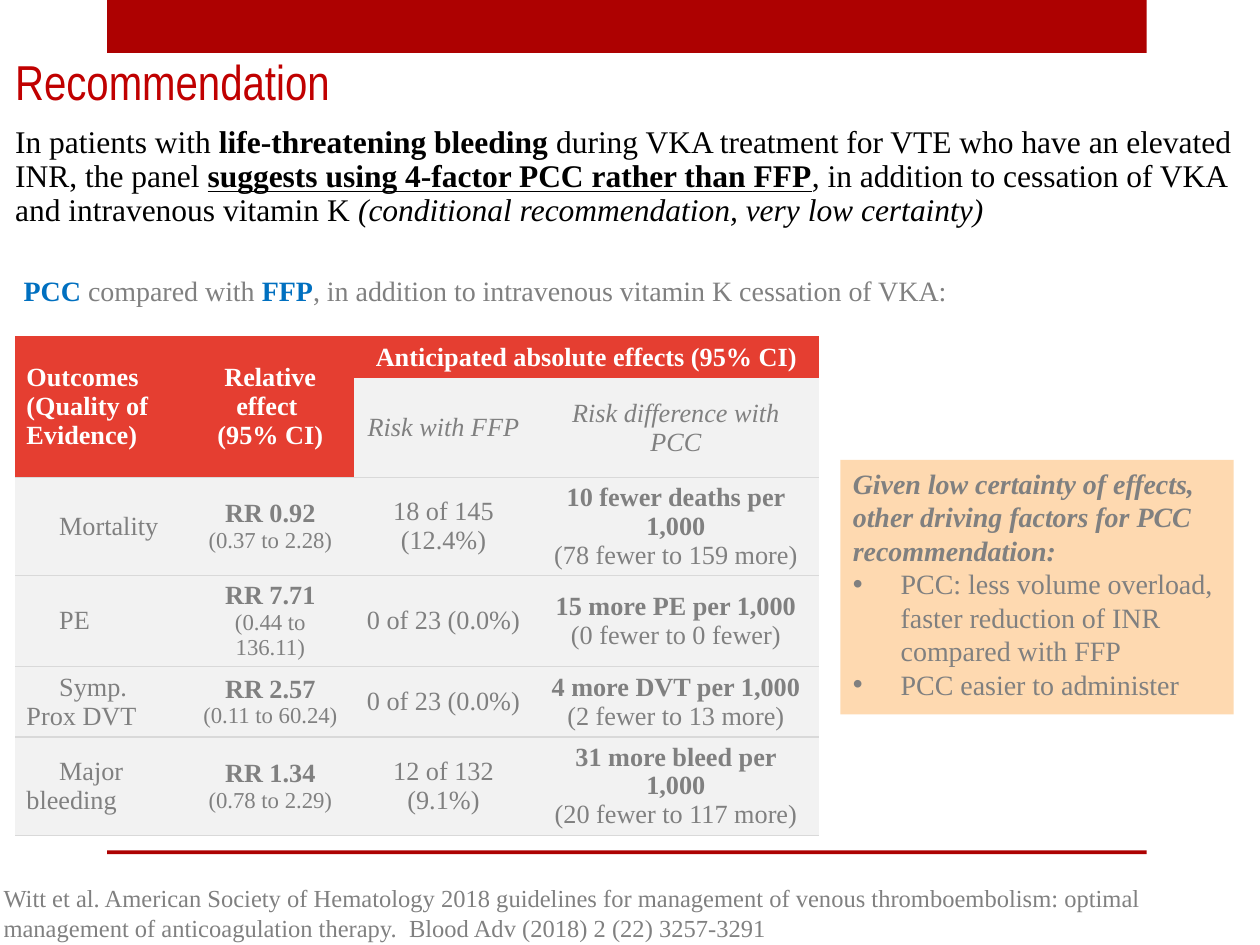
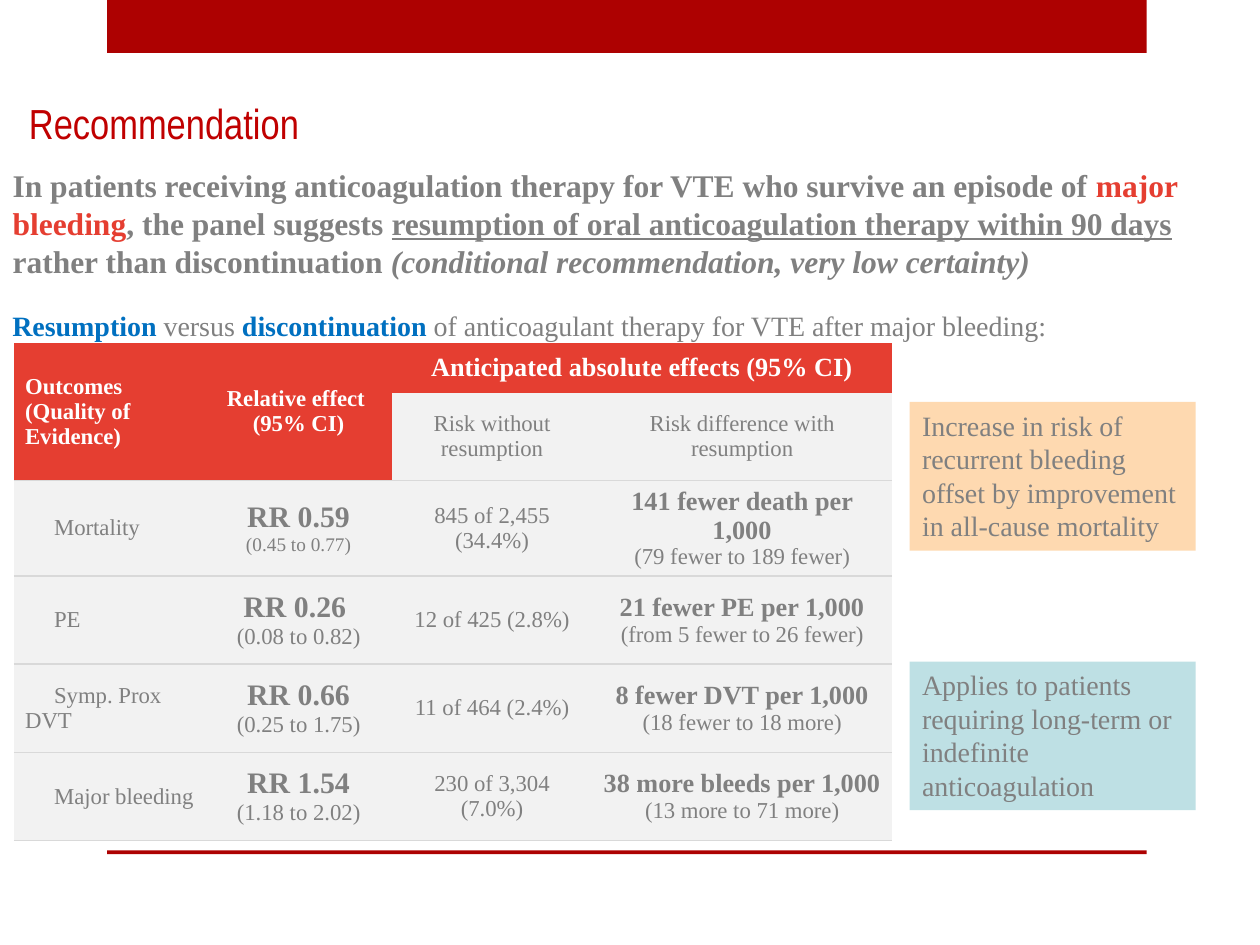
"""Build two slides of anticoagulation recommendations with evidence tables."""
from lxml import etree
from pptx import Presentation
from pptx.dml.color import RGBColor
from pptx.enum.shapes import MSO_SHAPE
from pptx.enum.text import MSO_ANCHOR, MSO_AUTO_SIZE, PP_ALIGN
from pptx.oxml.ns import qn
from pptx.util import Inches, Pt

RECTANGLE = MSO_SHAPE.RECTANGLE
TOP, MIDDLE = MSO_ANCHOR.TOP, MSO_ANCHOR.MIDDLE
LEFT, CENTER = PP_ALIGN.LEFT, PP_ALIGN.CENTER
NO_AUTOFIT = MSO_AUTO_SIZE.NONE

BAND, TITLE, HEADER = "AD0101", "C00000", "E53E31"
GREY, BLUE, BLACK, WHITE = "808080", "0070C0", "000000", "FFFFFF"
CELL, RULE, PEACH, AQUA = "F2F2F2", "D9D9D9", "FED9B0", "BEE0E4"
TITLE_FONT, TEXT_FONT = "Arial Narrow", "Times New Roman"
rgb = RGBColor.from_string

deck = Presentation()
deck.slide_width, deck.slide_height = Inches(10), Inches(7.5)


def area(left, top, width, height):
    """Turn percentages of the slide into left, top, width and height."""
    across, down = deck.slide_width / 100, deck.slide_height / 100
    return int(left * across), int(top * down), int(width * across), int(height * down)


def write(frame, text, new=False, align=LEFT, size=16, color=GREY, font=TEXT_FONT,
          bold=False, italic=False, underline=False, spacing=None):
    """Add a formatted span to the last paragraph, or to a new one."""
    para = frame.add_paragraph() if new else frame.paragraphs[-1]
    para.alignment, para.space_before = align, Pt(0)
    if spacing:
        para.line_spacing = spacing
    span = para.add_run()
    span.text = text
    span.font.name, span.font.size = font, Pt(size)
    span.font.color.rgb = rgb(color)
    span.font.bold, span.font.italic, span.font.underline = bold, italic, underline
    return para


KEY = {"color": BLUE, "bold": True}
STRONG = {"bold": True}
CERTAINTY = "(conditional recommendation, very low certainty)"

recommendations = [
    {
        "title": {"place": (1.2, 6.13, 97, 6.5), "size": 28, "spacing": 0.9},
        "body": {"place": (1.2, 13.4, 98.8, 14.6), "color": BLACK, "spacing": 0.9},
        "statement": [
            ("In patients with ", {}),
            ("life-threatening bleeding ", STRONG),
            ("during VKA treatment for VTE who have an elevated INR, the panel ", {}),
            ("suggests using 4-factor PCC rather than FFP", {"bold": True, "underline": True}),
            (", in addition to cessation of VKA and intravenous vitamin K ", {}),
            (CERTAINTY, {"italic": True}),
        ],
        "comparison_place": (0.9, 28.27, 98, 4.93),
        "comparison": [
            ("PCC ", KEY), ("compared with ", {}), ("FFP", KEY),
            (", in addition to intravenous vitamin K cessation of VKA:", {}),
        ],
        "table_corner": (1.2, 35.6),
        "columns": [13.6, 13.3, 14.2, 22.7],
        "rows": [4.4, 10.53, 10.4, 9.6, 7.47, 10.4],
        "padding": 0.04,
        "indent": 0.26,
        "sizes": {"text": 15, "ratio": 15, "intervals": [13, 13, 13, 13], "range": 15},
        "risks": ["Risk with FFP", "Risk difference with PCC"],
        "risks_italic": True,
        "outcomes": [
            ("Mortality", "RR 0.92", "(0.37 to 2.28)", "18 of 145 (12.4%)",
             "10 fewer deaths per 1,000", "(78 fewer to 159 more)"),
            ("PE", "RR 7.71", "(0.44 to 136.11)", "0 of 23 (0.0%)",
             "15 more PE per 1,000", "(0 fewer to 0 fewer)"),
            ("Symp. Prox DVT", "RR 2.57", "(0.11 to 60.24)", "0 of 23 (0.0%)",
             "4 more DVT per 1,000", "(2 fewer to 13 more)"),
            ("Major bleeding", "RR 1.34", "(0.78 to 2.29)", "12 of 132 (9.1%)",
             "31 more bleed per 1,000", "(20 fewer to 117 more)"),
        ],
        "callouts": [
            ((66.7, 48.67, 31.2, 26.93), PEACH,
             "Given low certainty of effects, other driving factors for PCC recommendation:",
             ["PCC: less volume overload, faster reduction of INR compared with FFP",
              "PCC easier to administer"]),
        ],
        "citation": "Witt et al. American Society of Hematology 2018 guidelines for management "
                    "of venous thromboembolism: optimal management of anticoagulation therapy.  "
                    "Blood Adv (2018) 2 (22) 3257-3291",
    },
    {
        "title": {"place": (2.3, 10.27, 96, 5.87), "size": 24, "spacing": 1.0},
        "body": {"place": (1, 17.6, 97.2, 12), "color": GREY, "spacing": 1.0},
        "statement": [
            ("In patients receiving anticoagulation therapy for VTE who survive an episode of ",
             STRONG),
            ("major bleeding", {"bold": True, "color": HEADER}),
            (", the panel suggests ", STRONG),
            ("resumption of oral anticoagulation therapy within 90 days ",
             {"bold": True, "underline": True}),
            ("rather than discontinuation ", STRONG),
            (CERTAINTY, {"bold": True, "italic": True}),
        ],
        "comparison_place": (0, 32, 98, 4.93),
        "comparison": [
            ("Resumption ", KEY), ("versus ", {}), ("discontinuation ", KEY),
            ("of anticoagulant therapy for VTE after major bleeding:", {}),
        ],
        "table_corner": (1.1, 36.27),
        "columns": [15.2, 14.8, 15.9, 23.8],
        "rows": [5.3, 9.2, 10, 9.33, 9.33, 9.33],
        "padding": 0.05,
        "indent": 0.23,
        "sizes": {"text": 13, "ratio": 17, "intervals": [11, 13, 13, 13], "range": 13},
        "risks": ["Risk without resumption", "Risk difference with resumption"],
        "risks_italic": False,
        "outcomes": [
            ("Mortality", "RR 0.59", "(0.45 to 0.77)", "845 of 2,455 (34.4%)",
             "141 fewer death per 1,000", "(79 fewer to 189 fewer)"),
            ("PE", "RR 0.26 ", "(0.08 to 0.82)", "12 of 425 (2.8%)",
             "21 fewer PE per 1,000", "(from 5 fewer to 26 fewer)"),
            ("Symp. Prox DVT", "RR 0.66", "(0.25 to 1.75)", "11 of 464 (2.4%)",
             "8 fewer DVT per 1,000", "(18 fewer to 18 more)"),
            ("Major bleeding", "RR 1.54", "(1.18 to 2.02)", "230 of 3,304 (7.0%)",
             "38 more bleeds per 1,000", "(13 more to 71 more)"),
        ],
        "callouts": [
            ((72.2, 42.53, 22.7, 15.73), PEACH,
             "Increase in risk of recurrent bleeding offset by improvement in all-cause mortality",
             []),
            ((72.2, 70, 22.7, 15.73), AQUA,
             "Applies to patients requiring long-term or indefinite anticoagulation", []),
        ],
        "citation": None,
    },
]

for number, content in enumerate(recommendations):
    slide = deck.slides.add_slide(deck.slide_layouts[1])
    title, body = slide.shapes.title, slide.placeholders[1]

    if number == 0:
        for top, height in [(0, 5.6), (90, 0.4)]:
            band = slide.shapes.add_shape(RECTANGLE, *area(8.5, top, 82.5, height))
            band.shadow.inherit = False
            band.fill.solid()
            band.fill.fore_color.rgb = rgb(BAND)
            band.line.fill.background()
            deck.slide_master.shapes.element.insert(2, band.element)

    for holder, style in [(title, content["title"]), (body, content["body"])]:
        holder.left, holder.top, holder.width, holder.height = area(*style["place"])
        frame = holder.text_frame
        frame.auto_size, frame.word_wrap, frame.vertical_anchor = NO_AUTOFIT, True, TOP
        frame.margin_left = frame.margin_right = frame.margin_top = frame.margin_bottom = 0
    write(title.text_frame, "Recommendation", size=content["title"]["size"], color=TITLE,
          font=TITLE_FONT, spacing=content["title"]["spacing"])
    for text, style in content["statement"]:
        para = write(body.text_frame, text, size=18,
                     **{"color": content["body"]["color"], **style},
                     spacing=content["body"]["spacing"])
    properties = para._p.get_or_add_pPr()
    properties.set("marL", "0")
    properties.set("indent", "0")
    etree.SubElement(properties, qn("a:buNone"))

    rows, columns = content["rows"], content["columns"]
    sizes = content["sizes"]
    place = area(*content["table_corner"], sum(columns), sum(rows))
    table = slide.shapes.add_table(len(rows), len(columns), *place).table
    table.first_row = table.horz_banding = False
    for column, share in zip(table.columns, columns):
        column.width = area(0, 0, share, 0)[2]
    for row, share in zip(table.rows, rows):
        row.height = area(0, 0, 0, share)[3]

    for row in range(len(rows)):
        for column in range(len(columns)):
            cell = table.cell(row, column)
            is_header = row == 0 or (row == 1 and column < 2)
            cell.vertical_anchor = MIDDLE
            cell.margin_left = cell.margin_right = Inches(0.09)
            cell.margin_top = cell.margin_bottom = Inches(content["padding"])
            ruled = {"a:lnL": False, "a:lnR": False, "a:lnT": row > 1, "a:lnB": row > 0}
            for side, shown in ruled.items():
                edge = etree.SubElement(cell._tc.get_or_add_tcPr(), qn(side), w=str(Pt(1)))
                if shown and not is_header:
                    ink = etree.SubElement(edge, qn("a:solidFill"))
                    etree.SubElement(ink, qn("a:srgbClr"), val=RULE)
                else:
                    etree.SubElement(edge, qn("a:noFill"))
            cell.fill.solid()
            cell.fill.fore_color.rgb = rgb(HEADER if is_header else CELL)

    for column in (0, 1):
        table.cell(0, column).merge(table.cell(1, column))
    table.cell(0, 2).merge(table.cell(0, 3))
    headings = [(["Outcomes", "(Quality of Evidence)"], LEFT, sizes["text"]),
                (["Relative effect ", "(95% CI)"], CENTER, sizes["text"]),
                (["Anticipated absolute effects (95% CI)"], CENTER, 15)]
    for column, (lines, align, size) in enumerate(headings):
        for index, line in enumerate(lines):
            write(table.cell(0, column).text_frame, line, new=index > 0, align=align,
                  size=size, color=WHITE, bold=True)
    for column, risk in enumerate(content["risks"], start=2):
        write(table.cell(1, column).text_frame, risk, align=CENTER, size=sizes["text"],
              italic=content["risks_italic"])

    for index, outcome in enumerate(content["outcomes"]):
        name, ratio, interval, risk, difference, spread = outcome
        frames = [table.cell(index + 2, column).text_frame for column in range(4)]
        para = write(frames[0], name, size=sizes["text"])
        para._p.get_or_add_pPr().set("indent", str(Inches(content["indent"])))
        write(frames[1], ratio, align=CENTER, size=sizes["ratio"], bold=True)
        write(frames[1], interval, new=True, align=CENTER, size=sizes["intervals"][index])
        write(frames[2], risk, align=CENTER, size=sizes["text"])
        write(frames[3], difference, align=CENTER, size=15, bold=True)
        write(frames[3], spread, new=True, align=CENTER, size=sizes["range"])

    comparison = slide.shapes.add_textbox(*area(*content["comparison_place"]))
    comparison.text_frame.word_wrap = True
    for text, style in content["comparison"]:
        write(comparison.text_frame, text, **style)

    for place, color, lead, points in content["callouts"]:
        callout = slide.shapes.add_shape(RECTANGLE, *area(*place))
        callout.shadow.inherit = False
        callout.fill.solid()
        callout.fill.fore_color.rgb = rgb(color)
        callout.line.fill.background()
        frame = callout.text_frame
        frame.word_wrap, frame.vertical_anchor = True, TOP
        write(frame, lead, bold=bool(points), italic=bool(points))
        for point in points:
            properties = write(frame, point, new=True)._p.get_or_add_pPr()
            properties.set("marL", str(Inches(0.38)))
            properties.set("indent", str(Inches(-0.38)))
            etree.SubElement(properties, qn("a:buFont"), typeface="Arial")
            etree.SubElement(properties, qn("a:buChar"), char="•")

    if content["citation"]:
        footnote = slide.shapes.add_textbox(*area(-0.7, 92.8, 100.7, 7.6))
        footnote.text_frame.word_wrap = True
        write(footnote.text_frame, content["citation"], size=14)

deck.save("out.pptx")
